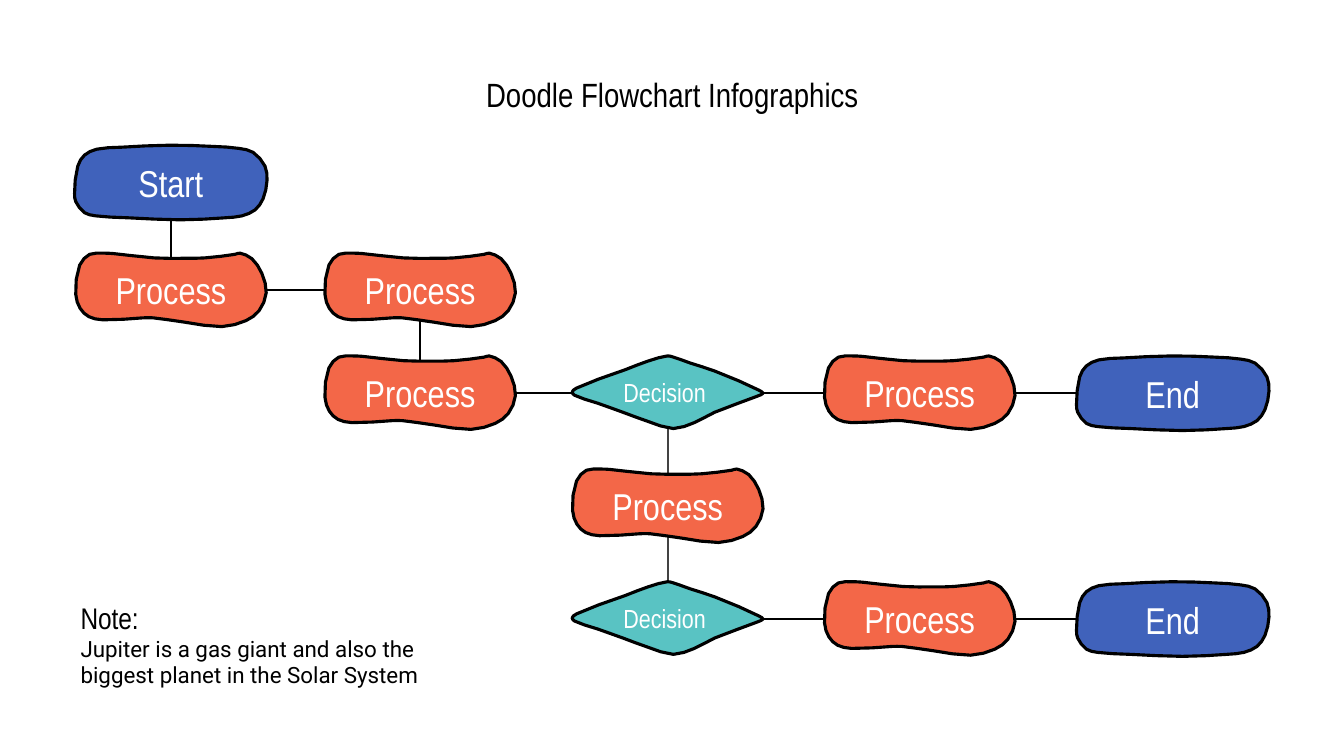
"""Build the doodle flowchart slide."""
from lxml.etree import SubElement
from pptx import Presentation
from pptx.dml.color import RGBColor
from pptx.enum.shapes import MSO_CONNECTOR
from pptx.enum.text import MSO_ANCHOR, MSO_AUTO_SIZE, PP_ALIGN
from pptx.oxml.ns import qn
from pptx.util import Cm, Pt

BLACK = RGBColor(0x00, 0x00, 0x00)
GREY = RGBColor(0x43, 0x43, 0x43)
WHITE = RGBColor(0xFF, 0xFF, 0xFF)
BLUE = RGBColor(0x40, 0x62, 0xBB)
ORANGE = RGBColor(0xF3, 0x67, 0x48)
TEAL = RGBColor(0x59, 0xC3, 0xC3)
NARROW = "Arial Narrow"

TITLE = "Doodle Flowchart Infographics"
NOTES = [
    ("Note:", 14.99, 1.14, 21.3, NARROW),
    ("Jupiter is a gas giant and also the biggest planet in the Solar System",
     15.82, 1.7, 16, "Roboto"),
]

PILL = [
    (2.39, 0), (1.19, 0.05), (0.56, 0.1), (0.25, 0.25), (0.08, 0.53),
    (0, 1.22), (0.03, 1.42), (0.25, 1.7), (0.53, 1.78), (1.37, 1.83),
    (2.67, 1.88), (3.78, 1.83), (4.22, 1.78), (4.55, 1.63), (4.75, 1.35),
    (4.85, 0.89), (4.8, 0.53), (4.5, 0.18), (4.14, 0.08), (3.48, 0.03),
]
WAVE = [
    (0.74, 0), (0.38, 0.03), (0.13, 0.3), (0.03, 1.04), (0.14, 1.39),
    (0.36, 1.6), (0.71, 1.68), (1.73, 1.63), (1.98, 1.63), (2.78, 1.74),
    (3.71, 1.85), (4.32, 1.7), (4.65, 1.45), (4.83, 1), (4.72, 0.51),
    (4.47, 0.14), (4.17, 0), (4.04, 0.03), (3.28, 0.12), (2.74, 0.13),
    (2.01, 0.12), (0.97, 0.01),
]
GEM = [
    (2.42, 0), (1.93, 0.13), (1.35, 0.35), (0.13, 0.81), (0.02, 0.91),
    (0.08, 0.99), (0.66, 1.19), (1.3, 1.42), (1.93, 1.65), (2.57, 1.83),
    (3.1, 1.68), (3.61, 1.42), (4.67, 1.02), (4.83, 0.94), (4.72, 0.86),
    (3.61, 0.38), (3, 0.18), (2.54, 0.02),
]
KINDS = {
    "Start": (PILL, BLUE, 26.7),
    "End": (PILL, BLUE, 26.7),
    "Process": (WAVE, ORANGE, 26.7),
    "Decision ": (GEM, TEAL, 18.7),
}

COLS = [1.88, 8.16, 14.4, 20.75, 27.13]
ROWS = [3.66, 6.38, 8.97, 11.82, 14.66]
MID_X, MID_Y = 2.43, 0.93
STEPS = [
    ("Start", 0, 0), ("Process", 0, 1), ("Process", 1, 1),
    ("Process", 1, 2), ("Decision ", 2, 2), ("Process", 3, 2),
    ("End", 4, 2), ("Process", 2, 3), ("Decision ", 2, 4),
    ("Process", 3, 4), ("End", 4, 4),
]
LINKS = [
    ((0, 0), (0, 1), BLACK), ((0, 1), (1, 1), BLACK),
    ((1, 1), (1, 2), BLACK), ((1, 2), (4, 2), BLACK),
    ((2, 2), (2, 4), GREY), ((2, 4), (4, 4), BLACK),
]


def blend(a, b, start, end, t):
    """Mix two points linearly between two knots."""
    part = (t - start) / (end - start)
    return tuple(p + (q - p) * part for p, q in zip(a, b))


def smooth(nodes):
    """Add a centripetal spline midpoint after each node of a closed outline."""
    trace = []
    for i, b in enumerate(nodes):
        a, c, d = (nodes[(i + k) % len(nodes)] for k in (-1, 1, 2))
        knots = [0]
        for p, q in ((a, b), (b, c), (c, d)):
            gap = ((q[0] - p[0]) ** 2 + (q[1] - p[1]) ** 2) ** 0.25
            knots.append(knots[-1] + gap)
        k0, k1, k2, k3 = knots
        t = (k1 + k2) / 2
        ab = blend(a, b, k0, k1, t)
        bc = blend(b, c, k1, k2, t)
        cd = blend(c, d, k2, k3, t)
        abc = blend(ab, bc, k0, k2, t)
        bcd = blend(bc, cd, k1, k3, t)
        trace += [b, blend(abc, bcd, k1, k2, t)]
    return trace


def write(shape, text, size, color, align, font=NARROW):
    """Put one formatted paragraph in a shape."""
    frame = shape.text_frame
    frame.word_wrap = True
    frame.auto_size = MSO_AUTO_SIZE.NONE
    frame.vertical_anchor = MSO_ANCHOR.MIDDLE
    frame.margin_left = frame.margin_right = Cm(0.33)
    frame.margin_top = frame.margin_bottom = Cm(0.33)
    frame.text = text
    para = frame.paragraphs[0]
    para.alignment = align
    para.font.size = Pt(size)
    para.font.name = font
    para.font.color.rgb = color


def link(slide, start, end, color):
    """Join the centres of two grid cells."""
    ends = [Cm(v) for col, row in (start, end)
            for v in (COLS[col] + MID_X, ROWS[row] + MID_Y)]
    line = slide.shapes.add_connector(MSO_CONNECTOR.STRAIGHT, *ends)
    line.line.color.rgb = color
    line.line.width = Pt(1.5)
    SubElement(line._element.spPr, qn("a:effectLst"))


def step(slide, label, col, row):
    """Draw one labelled step in its grid cell."""
    nodes, fill, size = KINDS[label]
    trace = [(Cm(COLS[col] + x), Cm(ROWS[row] + y)) for x, y in smooth(nodes)]
    pen = slide.shapes.build_freeform(*trace[0])
    pen.add_line_segments(trace[1:], close=True)
    shape = pen.convert_to_shape()
    shape.shadow.inherit = False
    shape.fill.solid()
    shape.fill.fore_color.rgb = fill
    shape.line.color.rgb = BLACK
    shape.line.width = Pt(2.25)
    write(shape, label, size, WHITE, PP_ALIGN.CENTER)


def main():
    """Assemble and save the slide."""
    deck = Presentation()
    deck.slide_width, deck.slide_height = Cm(33.87), Cm(19.05)
    slide = deck.slides.add_slide(deck.slide_layouts[5])
    title = slide.shapes.title
    title.left, title.top = Cm(1.7), Cm(1.52)
    title.width, title.height = Cm(30.48), Cm(1.7)
    write(title, TITLE, 24, BLACK, PP_ALIGN.CENTER)
    for start, end, color in LINKS:
        link(slide, start, end, color)
    for label, col, row in STEPS:
        step(slide, label, col, row)
    for text, top, height, size, font in NOTES:
        box = slide.shapes.add_textbox(Cm(1.7), Cm(top), Cm(10.82), Cm(height))
        write(box, text, size, BLACK, PP_ALIGN.LEFT, font)
    deck.save("out.pptx")


if __name__ == "__main__":
    main()
